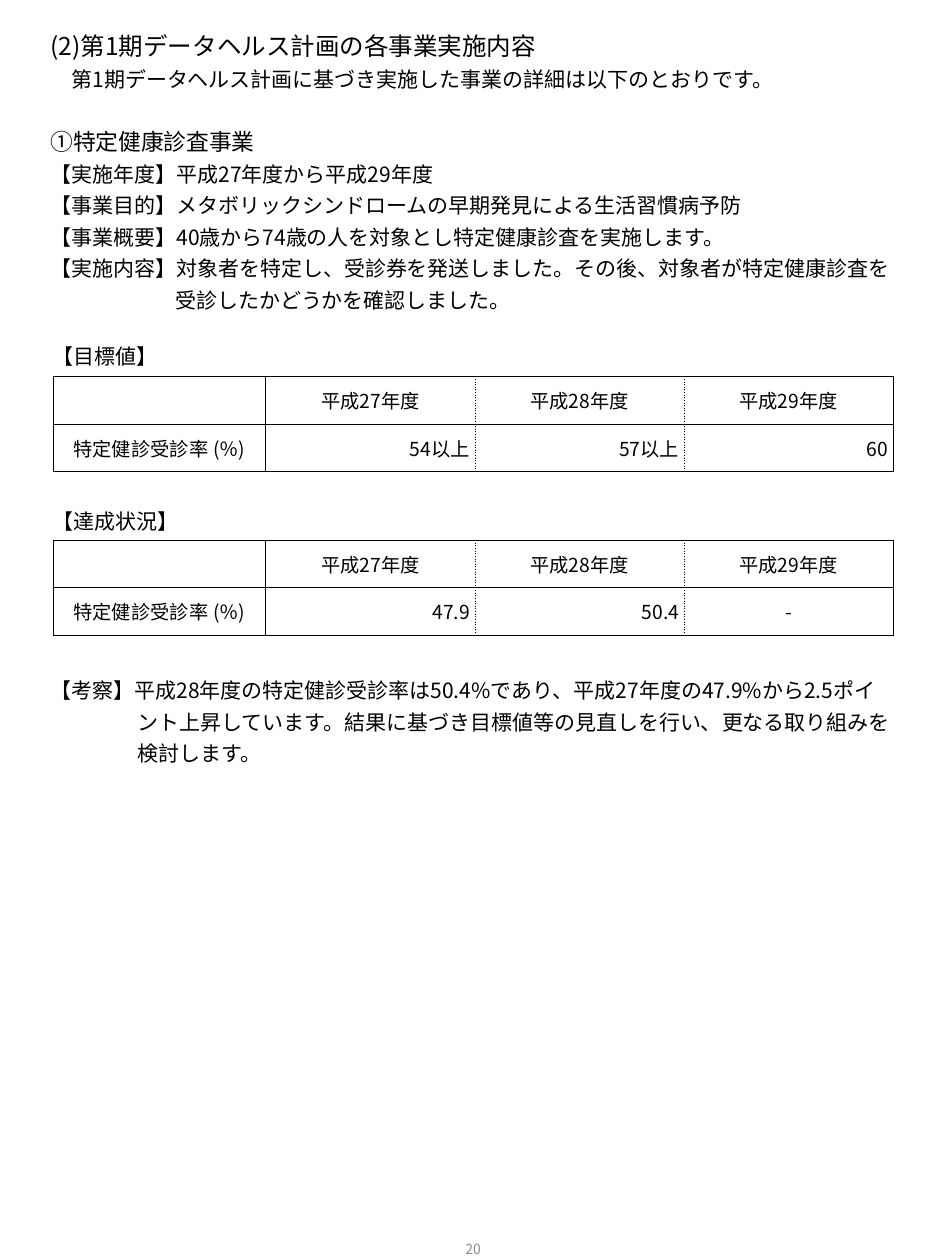
from lxml import etree
from pptx import Presentation
from pptx.dml.color import RGBColor
from pptx.enum.text import MSO_ANCHOR, PP_ALIGN
from pptx.oxml.ns import qn
from pptx.util import Inches, Pt

LEFT, CENTER, RIGHT = PP_ALIGN.LEFT, PP_ALIGN.CENTER, PP_ALIGN.RIGHT
TOP, MIDDLE = MSO_ANCHOR.TOP, MSO_ANCHOR.MIDDLE

FONT = "Noto Sans CJK JP"
COLORS = {"text": "000000", "line": "000000", "page": "8C8C8C"}
W, H = 7.5, 10
MARGIN, TABLE_LEFT, BODY_W = 0.4, 0.42, 6.69
COLS, ROW_H = (1.69, 1.66, 1.66, 1.66), 0.375
SPACING = 1.25

BODIES = [
    (0.14, 0.72, [
        ("(2)第1期データヘルス計画の各事業実施内容", 14, 0),
        ("　第1期データヘルス計画に基づき実施した事業の詳細は以下のとおりです。", 12, 0),
    ]),
    (0.91, 1.65, [
        ("①特定健康診査事業", 13, 0),
        ("【実施年度】平成27年度から平成29年度", 12, 0),
        ("【事業目的】メタボリックシンドロームの早期発見による生活習慣病予防", 12, 0),
        ("【事業概要】40歳から74歳の人を対象とし特定健康診査を実施します。", 12, 0),
        ("【実施内容】対象者を特定し、受診券を発送しました。その後、対象者が"
         "特定健康診査を受診したかどうかを確認しました。", 12, 0.99),
    ]),
    (5.28, 0.83, [
        ("【考察】平成28年度の特定健診受診率は50.4%であり、平成27年度の47.9%から"
         "2.5ポイント上昇しています。結果に基づき目標値等の見直しを行い、"
         "更なる取り組みを検討します。", 12, 0.69),
    ]),
]
HEADER = ["", "平成27年度", "平成28年度", "平成29年度"]
ROW_LABEL = "特定健診受診率 (％)"
TABLES = [
    ("【目標値】", 2.68, 2.99, ["54以上", "57以上", "60"]),
    ("【達成状況】", 3.99, 4.29, ["47.9", "50.4", "-"]),
]


def style(p, size, color="text", align=LEFT):
    """Format a paragraph and its runs."""
    p.alignment = align
    for r in p.runs:
        r.font.size, r.font.name = Pt(size), FONT
        r.font.color.rgb = RGBColor.from_string(COLORS[color])
        etree.SubElement(r.font._element, qn("a:ea"), typeface=FONT)


def add_text(s, box, lines, anchor=TOP, spacing=None, color="text", align=LEFT):
    """Add a text box holding (text, size, hanging indent) lines."""
    tf = s.shapes.add_textbox(*map(Inches, box)).text_frame
    tf.word_wrap, tf.vertical_anchor = True, anchor
    tf.margin_left = tf.margin_right = 0
    tf.text = "\n".join(text for text, _, _ in lines)
    for p, (_, size, hang) in zip(tf.paragraphs, lines):
        style(p, size, color, align)
        if spacing:
            p.line_spacing = spacing
        if hang:
            pPr = p._p.get_or_add_pPr()
            pPr.set("marL", str(Inches(hang)))
            pPr.set("indent", str(-Inches(hang)))


def set_borders(cell, col):
    """Draw solid edges, with dots between the year columns."""
    tcPr = cell._tc.get_or_add_tcPr()
    dotted = {"lnL": col > 1, "lnR": 0 < col < len(COLS) - 1}
    for i, side in enumerate(("lnL", "lnR", "lnT", "lnB")):
        ln = etree.Element(qn("a:" + side), w=str(Pt(0.5)))
        fill = etree.SubElement(ln, qn("a:solidFill"))
        etree.SubElement(fill, qn("a:srgbClr"), val=COLORS["line"])
        etree.SubElement(ln, qn("a:prstDash"),
                         val="sysDot" if dotted.get(side) else "solid")
        tcPr.insert(i, ln)


def add_rates(s, top, values):
    """Add a table of yearly rates."""
    rows = [HEADER, [ROW_LABEL] + values]
    table = s.shapes.add_table(
        len(rows), len(COLS), Inches(TABLE_LEFT), Inches(top),
        Inches(sum(COLS)), Inches(ROW_H * len(rows))).table
    table.first_row = table.horz_banding = False
    for col, width in zip(table.columns, COLS):
        col.width = Inches(width)
    for i, row in enumerate(rows):
        for j, text in enumerate(row):
            cell = table.cell(i, j)
            cell.text, cell.vertical_anchor = text, MIDDLE
            cell.margin_left = cell.margin_right = Inches(0.04)
            cell.margin_top = cell.margin_bottom = Inches(0.01)
            cell.fill.background()
            number = i > 0 and j > 0 and text != "-"
            style(cell.text_frame.paragraphs[0], 11, align=RIGHT if number else CENTER)
            set_borders(cell, j)


def main():
    """Build the slide."""
    prs = Presentation()
    prs.slide_width, prs.slide_height = Inches(W), Inches(H)
    s = prs.slides.add_slide(prs.slide_layouts[6])
    for top, height, lines in BODIES:
        add_text(s, (MARGIN, top, BODY_W, height), lines, spacing=SPACING)
    for title, title_top, top, values in TABLES:
        add_text(s, (TABLE_LEFT, title_top, BODY_W, 0.3), [(title, 12, 0)], MIDDLE)
        add_rates(s, top, values)
    add_text(s, (2.88, 9.65, 1.75, 0.53), [("20", 8, 0)], MIDDLE,
             color="page", align=CENTER)
    prs.save("out.pptx")


if __name__ == "__main__":
    main()
